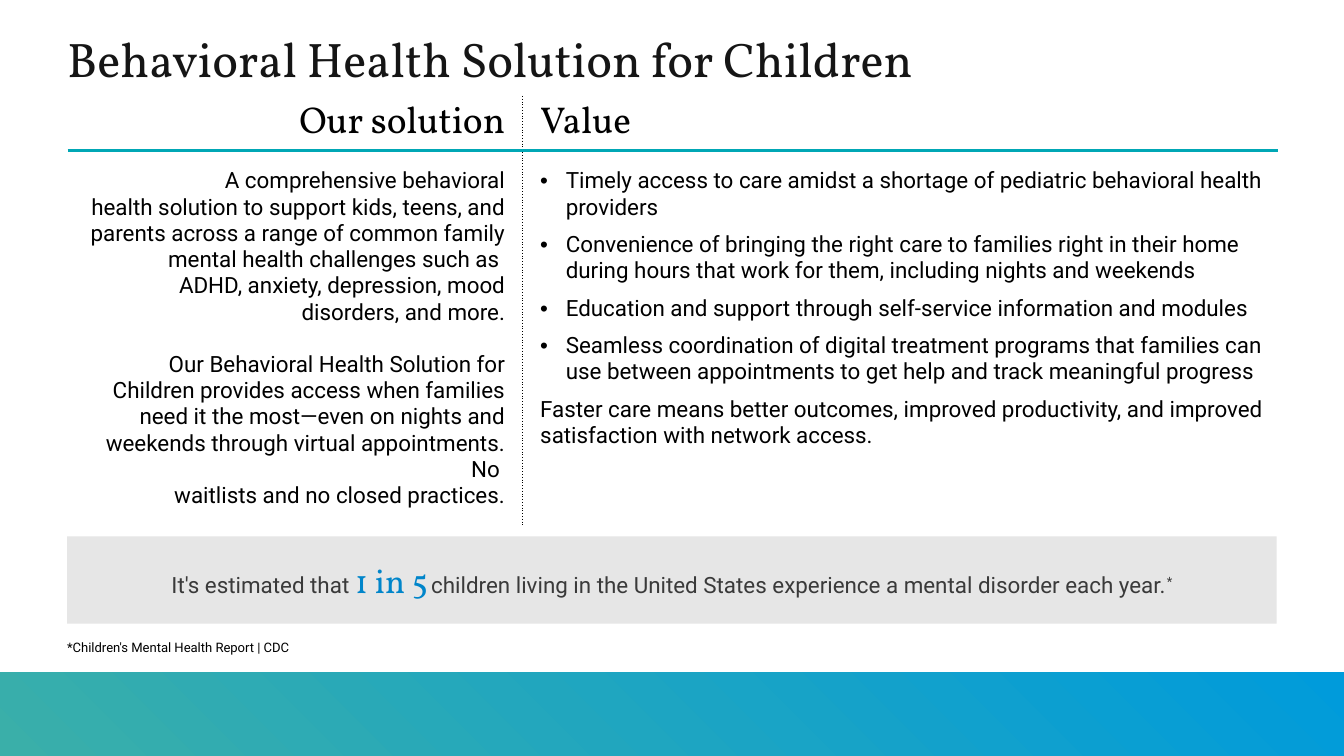
from lxml import etree
from pptx import Presentation
from pptx.dml.color import RGBColor
from pptx.enum.shapes import MSO_SHAPE
from pptx.enum.text import MSO_ANCHOR, PP_ALIGN
from pptx.oxml.ns import qn
from pptx.util import Inches, Pt

RECTANGLE = MSO_SHAPE.RECTANGLE
TOP, MIDDLE, BOTTOM = MSO_ANCHOR.TOP, MSO_ANCHOR.MIDDLE, MSO_ANCHOR.BOTTOM
LEFT, CENTER, RIGHT = PP_ALIGN.LEFT, PP_ALIGN.CENTER, PP_ALIGN.RIGHT
SANS, SERIF = "Roboto", "Vollkorn"
BLACK, GRAY, TEAL = "000000", "3A3A3A", "00A7B5"
DOTTED = (BLACK, 0.5, "sysDot")
RULE = (TEAL, 2.25, "solid")
HARD_SPACE = chr(160)

SOLUTION = [
    f"A comprehensive behavioral health{HARD_SPACE}solution to support kids,{HARD_SPACE}teens,"
    f"{HARD_SPACE}and parents across a range of common{HARD_SPACE}family mental health "
    "challenges such as \nADHD, anxiety, depression, mood disorders, and more.",
    "Our Behavioral Health Solution for Children provides access when families need it the "
    "most—even on nights and weekends through virtual appointments. No \n"
    "waitlists and no closed practices.",
]
BENEFITS = [
    "Timely access to care amidst a shortage of pediatric behavioral health providers",
    "Convenience of bringing the right care to families right in their home during hours "
    "that work for them, including nights and weekends",
    "Education and support through self-service information and modules",
    f"Seamless coordination of digital treatment programs that families{HARD_SPACE}can use "
    "between appointments to get help and track meaningful progress",
]
SUMMARY = ("Faster care means better outcomes, improved productivity, and improved "
           "satisfaction with network access.")


def color(value):
    return RGBColor.from_string(value)


def write(para, text, size=12, font=SANS, ink=BLACK, align=LEFT, baseline=0):
    para.alignment = align
    for index, line in enumerate(text.split("\n")):
        if index:
            para.add_line_break()
        span = para.add_run()
        span.text = line
        span.font.size = Pt(size)
        span.font.name = font
        span.font.color.rgb = color(ink)
        if baseline:
            span.font._element.set("baseline", str(baseline * 1000))


def next_para(frame, index):
    return frame.add_paragraph() if index else frame.paragraphs[0]


def add_bullet(para):
    properties = para._p.get_or_add_pPr()
    properties.set("marL", str(Inches(0.19)))
    properties.set("indent", str(-Inches(0.19)))
    etree.SubElement(properties, qn("a:buFont"), typeface="Arial")
    etree.SubElement(properties, qn("a:buChar"), char="•")


def add_caption(page, left, top, width, height, text, anchor=TOP, bottom=0.05, **style):
    box = page.shapes.add_textbox(Inches(left), Inches(top), Inches(width), Inches(height))
    frame = box.text_frame
    frame.word_wrap = True
    frame.vertical_anchor = anchor
    frame.margin_left = 0
    frame.margin_bottom = Inches(bottom)
    write(frame.paragraphs[0], text, **style)


def add_panel(page, left, top, width, height):
    panel = page.shapes.add_shape(
        RECTANGLE, Inches(left), Inches(top), Inches(width), Inches(height))
    panel.shadow.inherit = False
    panel.line.fill.background()
    return panel


def add_footer_band(page, left, top, width, height):
    band = add_panel(page, left, top, width, height)
    band.rotation = 180
    band.fill.gradient()
    band.fill.gradient_angle = 45
    for stop, value in zip(band.fill.gradient_stops, ("009BDB", "3AAFA9")):
        stop.color.rgb = color(value)


def add_callout(page, left, top, width, height):
    panel = add_panel(page, left, top, width, height)
    panel.fill.solid()
    panel.fill.fore_color.rgb = color("E6E6E6")
    panel.text_frame.word_wrap = True
    panel.text_frame.vertical_anchor = MIDDLE
    para = panel.text_frame.paragraphs[0]
    write(para, "It's estimated that ", ink=GRAY, align=CENTER)
    write(para, "1 in 5", size=18, font=SERIF, ink="0085CA", align=CENTER)
    write(para, " ", ink=GRAY, align=CENTER, baseline=30)
    write(para, "children living in the United States experience a mental disorder each year.",
          ink=GRAY, align=CENTER)
    write(para, "*", ink=GRAY, align=CENTER, baseline=30)


def format_cell(cell, borders, margins, anchor):
    properties = cell._tc.get_or_add_tcPr()
    for side in "LRTB":
        if side in borders:
            ink, width, dash = borders[side]
            line = etree.SubElement(properties, qn(f"a:ln{side}"), w=str(Pt(width)))
            fill = etree.SubElement(line, qn("a:solidFill"))
            etree.SubElement(fill, qn("a:srgbClr"), val=ink)
            etree.SubElement(line, qn("a:prstDash"), val=dash)
    cell.fill.background()
    cell.vertical_anchor = anchor
    cell.margin_left, cell.margin_right, cell.margin_top, cell.margin_bottom = map(
        Inches, margins)


def add_comparison(page, left, top, width, height):
    holder = page.shapes.add_table(
        2, 2, Inches(left), Inches(top), Inches(width), Inches(height))
    table = holder.table
    table.first_row = False
    table.horz_banding = False
    table.columns[0].width = Inches(3.38)
    table.columns[1].width = Inches(width - 3.38)
    table.rows[0].height = Inches(0.4)
    table.rows[1].height = Inches(2.33)
    holder.height = Inches(height)

    for column, (heading, align, side) in enumerate(
            [("Our solution", RIGHT, "R"), ("Value", LEFT, "L")]):
        header, body = table.cell(0, column), table.cell(1, column)
        format_cell(header, {side: DOTTED, "B": RULE}, (0.13, 0.13, 0, 0), MIDDLE)
        format_cell(body, {side: DOTTED, "T": RULE},
                    (0.13, 0 if column else 0.13, 0.13, 0.07), TOP)
        write(header.text_frame.paragraphs[0], heading, size=20, font=SERIF, align=align)

    for index, text in enumerate(SOLUTION):
        para = next_para(table.cell(1, 0).text_frame, index)
        if index:
            para.space_before = Pt(14)
        write(para, text, align=RIGHT)

    for index, text in enumerate(BENEFITS + [SUMMARY]):
        para = next_para(table.cell(1, 1).text_frame, index)
        if text != SUMMARY:
            add_bullet(para)
        para.space_after = Pt(6)
        write(para, text)


def main():
    deck = Presentation()
    deck.slide_width = Inches(10)
    deck.slide_height = deck.slide_width * 9 // 16
    page = deck.slides.add_slide(deck.slide_layouts[6])
    add_footer_band(page, 0, 5, 10, 0.63)
    add_caption(page, 0.5, 0, 9.29, 0.65, "Behavioral Health Solution for Children",
                anchor=BOTTOM, bottom=0, size=26, font=SERIF, ink="151515")
    add_comparison(page, 0.51, 0.72, 8.99, 3)
    add_callout(page, 0.5, 3.99, 9, 0.65)
    add_caption(page, 0.5, 4.71, 4.5, 0.29, "*Children's Mental Health Report | CDC", size=7)
    deck.save("out.pptx")


if __name__ == "__main__":
    main()
